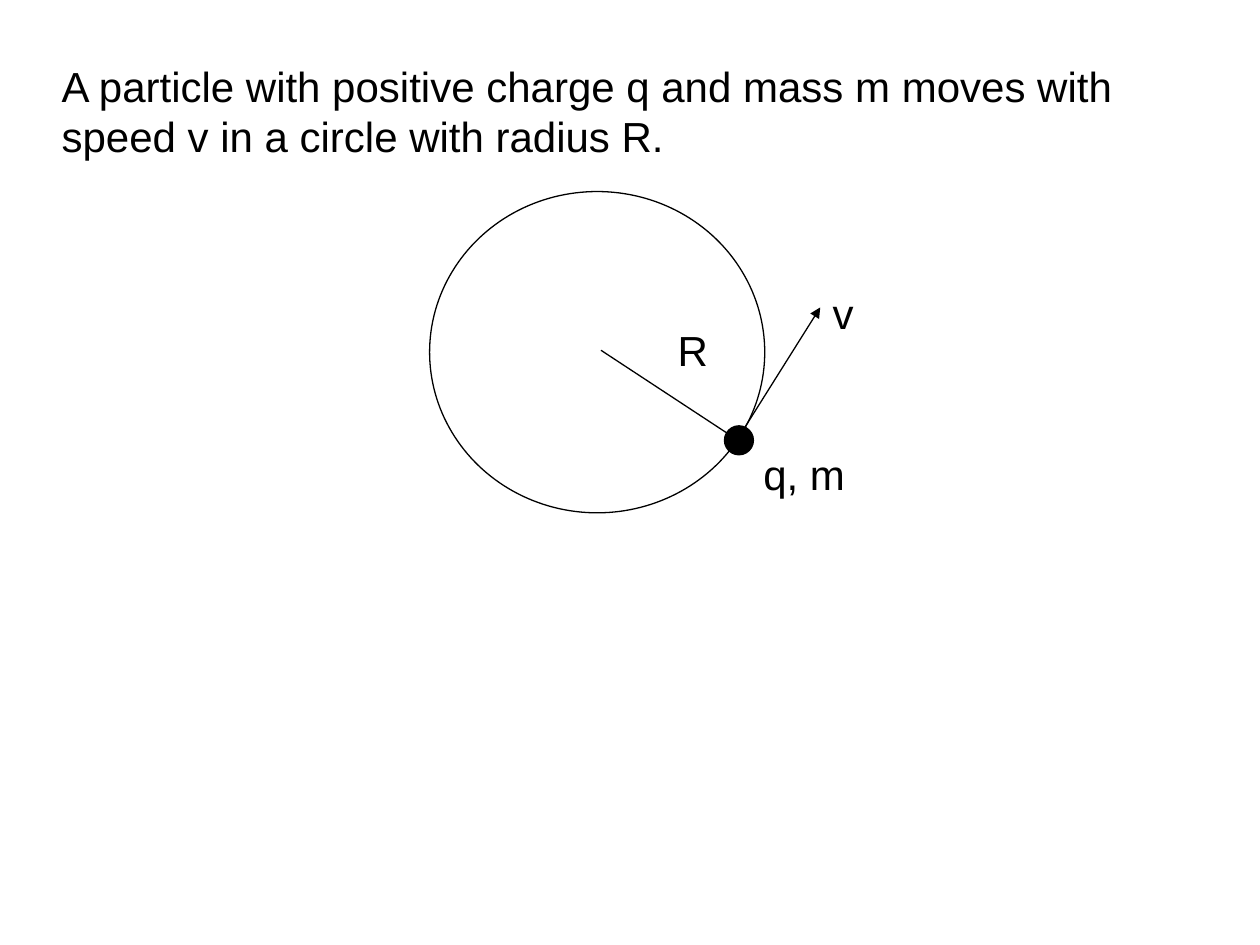
from dataclasses import dataclass

from lxml import etree
from pptx import Presentation
from pptx.dml.color import RGBColor
from pptx.enum.shapes import MSO_CONNECTOR, MSO_SHAPE
from pptx.enum.text import MSO_AUTO_SIZE
from pptx.oxml.ns import qn
from pptx.util import Inches, Pt

OVAL = MSO_SHAPE.OVAL
STRAIGHT = MSO_CONNECTOR.STRAIGHT
FIT_SHAPE = MSO_AUTO_SIZE.SHAPE_TO_FIT_TEXT
BLANK_LAYOUT = 6


@dataclass(frozen=True)
class Theme:
    ink: RGBColor = RGBColor(0, 0, 0)
    font: str = "Arial"
    text_size: Pt = Pt(24)
    line_width: Pt = Pt(0.75)


THEME = Theme()


def add_text(slide, text, left, top, width, height, wrap=False):
    box = slide.shapes.add_textbox(
        Inches(left), Inches(top), Inches(width), Inches(height))
    frame = box.text_frame
    frame.word_wrap = wrap
    frame.auto_size = FIT_SHAPE
    run = frame.paragraphs[0].add_run()
    run.text = text
    run.font.name = THEME.font
    run.font.size = THEME.text_size
    run.font.color.rgb = THEME.ink


def style_line(line):
    line.color.rgb = THEME.ink
    line.width = THEME.line_width


def add_circle(slide, left, top, width, height, filled=False):
    shape = slide.shapes.add_shape(
        OVAL, Inches(left), Inches(top), Inches(width), Inches(height))
    shape.shadow.inherit = False
    if filled:
        shape.fill.solid()
        shape.fill.fore_color.rgb = THEME.ink
    else:
        shape.fill.background()
    style_line(shape.line)


def add_line(slide, start, end, arrow=False):
    connector = slide.shapes.add_connector(
        STRAIGHT, *(Inches(value) for value in (*start, *end)))
    style_line(connector.line)
    properties = connector._element.spPr
    if arrow:
        etree.SubElement(properties.find(qn("a:ln")), qn("a:tailEnd"), type="triangle")
    etree.SubElement(properties, qn("a:effectLst"))


def main():
    presentation = Presentation()
    presentation.slide_width = Inches(10)
    presentation.slide_height = Inches(7.5)
    slide = presentation.slides.add_slide(presentation.slide_layouts[BLANK_LAYOUT])

    # Problem statement
    add_text(slide, "A particle with positive charge q and mass m moves with "
             "speed v in a circle with radius R.", 0.39, 0.43, 9.21, 0.91, wrap=True)

    # Orbit and particle
    add_circle(slide, 3.41, 1.52, 2.66, 2.55)
    add_circle(slide, 5.75, 3.38, 0.23, 0.23, filled=True)
    add_text(slide, "q, m", 5.96, 3.51, 0.86, 0.5)

    # Velocity and radius, both meeting at the particle
    particle = (5.85, 3.49)
    add_text(slide, "v", 6.51, 2.23, 0.37, 0.5)
    add_line(slide, particle, (6.51, 2.44), arrow=True)
    add_line(slide, (4.77, 2.78), particle)
    add_text(slide, "R", 5.28, 2.53, 0.45, 0.5)

    presentation.save("out.pptx")


if __name__ == "__main__":
    main()
